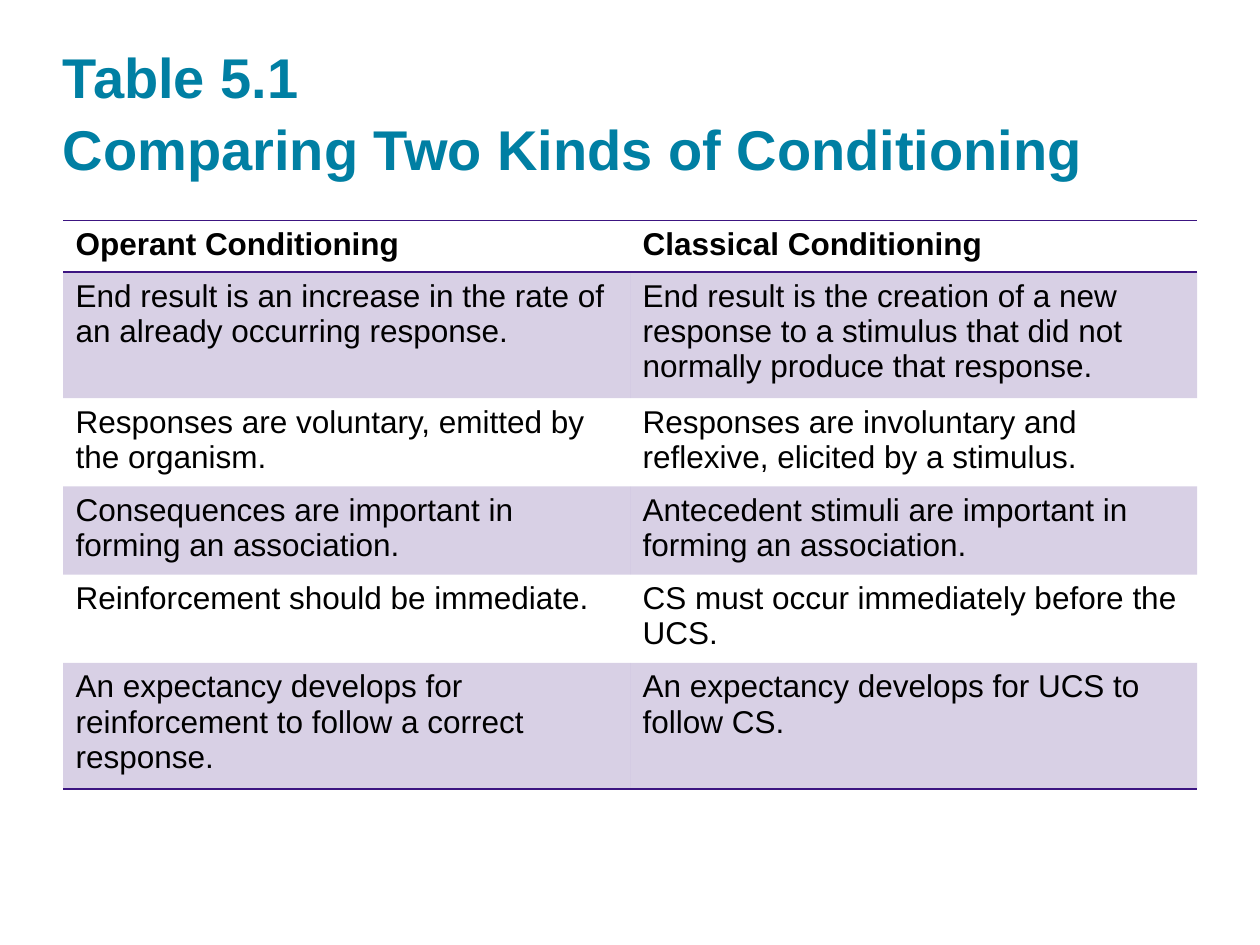
from typing import NamedTuple

import lxml.etree
import pptx
import pptx.dml.color
import pptx.enum.text
import pptx.oxml.ns
import pptx.util

Inches = pptx.util.Inches
Pt = pptx.util.Pt
qn = pptx.oxml.ns.qn

COLORS = {"title": "007FA3", "text": "000000", "accent": "3C1581"}
FONT = "Arial"
PLAIN_TABLE_STYLE = "{2D5ABB26-0587-4C30-8999-92F81FD0307C}"
BAND_OPACITY = 20


class Comparison(NamedTuple):
    operant: str
    classical: str


COMPARISONS = [
    Comparison("Operant Conditioning", "Classical Conditioning"),
    Comparison(
        "End result is an increase in the rate of an already occurring response.",
        "End result is the creation of a new response to a stimulus that did not normally produce that response.",
    ),
    Comparison(
        "Responses are voluntary, emitted by the organism.",
        "Responses are involuntary and reflexive, elicited by a stimulus.",
    ),
    Comparison(
        "Consequences are important in forming an association.",
        "Antecedent stimuli are important in forming an association.",
    ),
    Comparison(
        "Reinforcement should be immediate.",
        "CS must occur immediately before the UCS.",
    ),
    Comparison(
        "An expectancy develops for reinforcement to follow a correct response.",
        "An expectancy develops for UCS to follow CS.",
    ),
]


def set_font(para, size: float, color: str, bold: bool) -> None:
    font = para.font
    font.name = FONT
    font.size = Pt(size)
    font.bold = bold
    font.color.rgb = pptx.dml.color.RGBColor.from_string(COLORS[color])


def add_title(page) -> None:
    box = page.shapes.add_textbox(Inches(0.5), Inches(0.24), Inches(9), Inches(1.2))
    frame = box.text_frame
    frame.word_wrap = True
    frame.vertical_anchor = pptx.enum.text.MSO_ANCHOR.BOTTOM
    frame.margin_left = frame.margin_top = frame.margin_right = frame.margin_bottom = 0
    para = frame.paragraphs[0]
    para.text = "Table 5.1\vComparing Two Kinds of Conditioning"
    para.line_spacing = 1.07
    set_font(para, 32, "title", True)


def set_borders(cell, sides: list[str]) -> None:
    properties = cell._tc.get_or_add_tcPr()
    for index, side in enumerate(sides):
        line = lxml.etree.Element(qn(f"a:ln{side}"), w=str(Pt(1)))
        fill = lxml.etree.SubElement(line, qn("a:solidFill"))
        lxml.etree.SubElement(fill, qn("a:srgbClr"), val=COLORS["accent"])
        properties.insert(index, line)


def set_band(cell) -> None:
    cell.fill.solid()
    cell.fill.fore_color.rgb = pptx.dml.color.RGBColor.from_string(COLORS["accent"])
    color = cell._tc.tcPr.find(f"{qn('a:solidFill')}/{qn('a:srgbClr')}")
    lxml.etree.SubElement(color, qn("a:alpha"), val=str(BAND_OPACITY * 1000))


def add_comparison_table(page, comparisons: list[Comparison]) -> None:
    frame = page.shapes.add_table(
        len(comparisons), 2, Inches(0.5), Inches(1.75), Inches(9), Inches(4.51)
    )
    table = frame.table
    table._tbl.tblPr.find(qn("a:tableStyleId")).text = PLAIN_TABLE_STYLE
    table.horz_banding = False
    last = len(comparisons) - 1
    borders = {0: ["T", "B"], last: ["B"]}
    for index, comparison in enumerate(comparisons):
        table.rows[index].height = Inches(0.41)
        for cell, text in zip(table.rows[index].cells, comparison):
            cell.text = text
            set_font(cell.text_frame.paragraphs[0], 18, "text", index == 0)
            if index % 2:
                set_band(cell)
            else:
                cell.fill.background()
            set_borders(cell, borders.get(index, []))
    frame.height = Inches(4.51)


def main() -> None:
    deck = pptx.Presentation()
    deck.slide_width = Inches(10)
    deck.slide_height = Inches(7.5)
    page = deck.slides.add_slide(deck.slide_layouts[6])
    add_title(page)
    add_comparison_table(page, COMPARISONS)
    deck.save("out.pptx")


if __name__ == "__main__":
    main()
